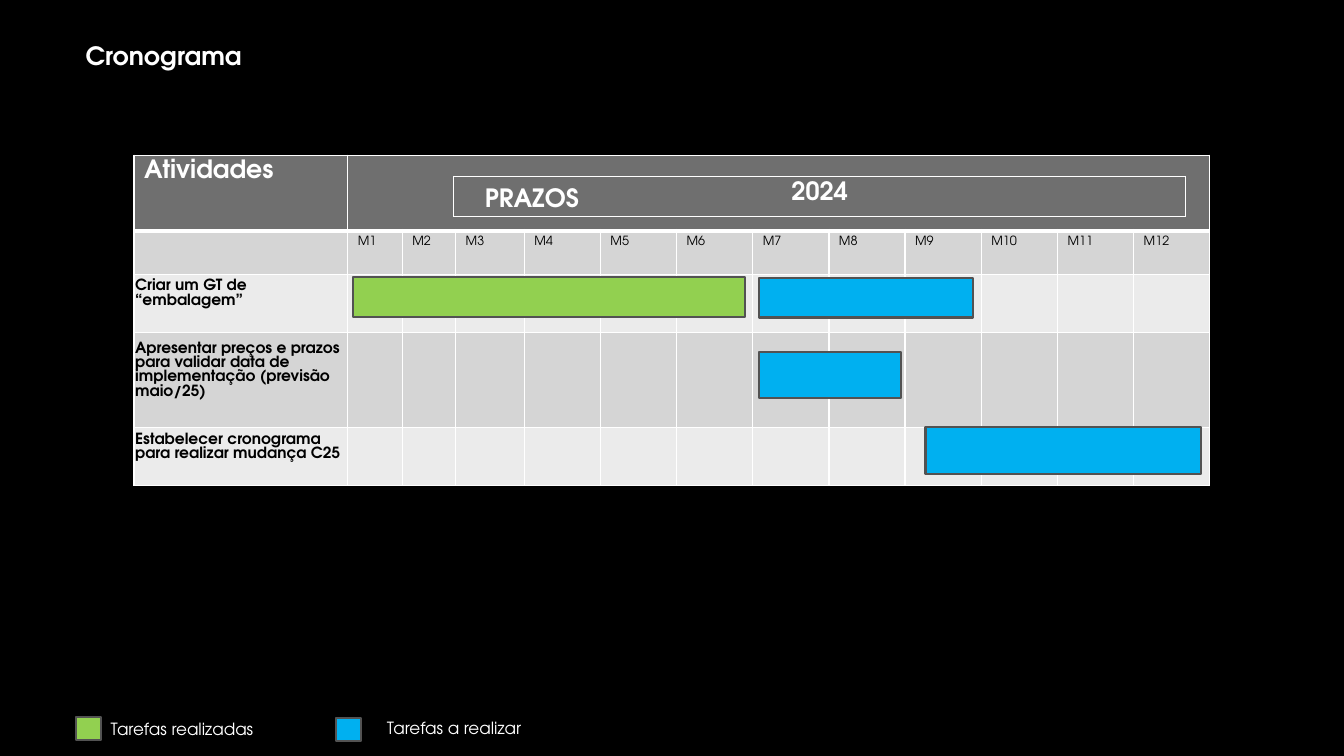
from lxml import etree
from pptx import Presentation
from pptx.dml.color import RGBColor
from pptx.enum.shapes import MSO_SHAPE as Preset
from pptx.enum.text import MSO_ANCHOR as Anchor, PP_ALIGN as Align
from pptx.oxml.ns import qn
from pptx.util import Inches, Pt

FONT = "TeX Gyre Adventor"
WHITE, BLACK = "FFFFFF", "000000"
HEADER, DARK_ROW, LIGHT_ROW = "6F6F6F", "D5D5D5", "EBEBEB"
DONE, PLANNED, OUTLINE = "92D050", "00B0F0", "525252"

SCHEDULE_WIDTH = 10.67
FIRST_WIDTHS = [2.12, 0.54, 0.53, 0.68]
EQUAL_MONTHS = 9
EQUAL_WIDTH = (SCHEDULE_WIDTH - sum(FIRST_WIDTHS)) / EQUAL_MONTHS
COLUMN_WIDTHS = FIRST_WIDTHS + [EQUAL_WIDTH] * EQUAL_MONTHS
ROW_HEIGHTS = [0.75, 0.43, 0.56, 0.92, 0.57]
ACTIVITIES = [
    "Criar um GT de “embalagem”",
    "Apresentar preços e prazos para validar data de implementação (previsão maio/25)",
    "Estabelecer cronograma para realizar mudança C25",
]
BARS = [
    (3.5, 2.75, 3.89, 0.4, DONE),
    (7.53, 2.76, 2.12, 0.39, PLANNED),
    (7.53, 3.49, 1.41, 0.46, PLANNED),
    (9.18, 4.24, 2.73, 0.46, PLANNED),
]
LEGEND = [
    (0.75, 7.11, 1.0, 7.08, DONE, "Tarefas realizadas"),
    (3.33, 7.12, 3.74, 7.07, PLANNED, "Tarefas a realizar"),
]


def color(value):
    return RGBColor.from_string(value)


def write(text_frame, text, size, text_color, bold=False):
    paragraph = text_frame.paragraphs[0]
    run = paragraph.add_run()
    run.text = text
    run.font.name = FONT
    run.font.size = Pt(size)
    run.font.bold = bold
    run.font.color.rgb = color(text_color)
    return paragraph


def add_label(slide, left, top, width, height, text, size, bold=False):
    box = slide.shapes.add_textbox(
        Inches(left), Inches(top), Inches(width), Inches(height))
    box.text_frame.word_wrap = True
    write(box.text_frame, text, size, WHITE, bold)


def add_block(slide, left, top, width, height, fill):
    block = slide.shapes.add_shape(
        Preset.RECTANGLE, Inches(left), Inches(top), Inches(width), Inches(height))
    block.shadow.inherit = False
    block.fill.solid()
    block.fill.fore_color.rgb = color(fill)
    block.line.color.rgb = color(OUTLINE)
    block.line.width = Pt(1.5)


def add_grid(slide, left, top, widths, heights):
    frame = slide.shapes.add_table(
        len(heights), len(widths), Inches(left), Inches(top),
        Inches(sum(widths)), Inches(sum(heights)))
    table = frame.table
    for column, width in zip(table.columns, widths):
        column.width = Inches(width)
    for row, height in zip(table.rows, heights):
        row.height = Inches(height)
    return table


def style_cell(cell, fill=None, top=1, bottom=1):
    """Draw white borders, then fill the cell or leave it clear."""
    properties = cell._tc.get_or_add_tcPr()
    for side, width in (("L", 1), ("R", 1), ("T", top), ("B", bottom)):
        line = etree.SubElement(properties, qn(f"a:ln{side}"), w=str(Pt(width)))
        solid = etree.SubElement(line, qn("a:solidFill"))
        etree.SubElement(solid, qn("a:srgbClr"), val=WHITE)
    if fill:
        cell.fill.solid()
        cell.fill.fore_color.rgb = color(fill)
    else:
        cell.fill.background()


def add_schedule(slide):
    table = add_grid(slide, 1.33, 1.54, COLUMN_WIDTHS, ROW_HEIGHTS)
    row_fills = [HEADER, DARK_ROW, LIGHT_ROW, DARK_ROW, LIGHT_ROW]
    for row_index, fill in enumerate(row_fills):
        for column_index in range(len(COLUMN_WIDTHS)):
            style_cell(table.cell(row_index, column_index), fill,
                       top=3 if row_index == 1 else 1,
                       bottom=3 if row_index == 0 else 1)
    table.cell(0, 1).merge(table.cell(0, len(COLUMN_WIDTHS) - 1))
    write(table.cell(0, 0).text_frame, "Atividades", 18, WHITE, bold=True)
    for month in range(1, len(COLUMN_WIDTHS)):
        write(table.cell(1, month).text_frame, f"M{month}", 9, BLACK)
    for row_index, activity in enumerate(ACTIVITIES, start=2):
        cell = table.cell(row_index, 0)
        cell.vertical_anchor = Anchor.MIDDLE
        cell.margin_left = cell.margin_right = cell.margin_top = Inches(0.01)
        cell.margin_bottom = Inches(0.2)
        write(cell.text_frame, activity, 11, BLACK, bold=True)


def add_year(slide):
    cell = add_grid(slide, 4.5, 1.75, [7.26], [0.4]).cell(0, 0)
    style_cell(cell)
    paragraph = write(cell.text_frame, "2024", 18, WHITE, bold=True)
    paragraph.alignment = Align.CENTER


def main():
    presentation = Presentation()
    presentation.slide_width = Inches(13.33)
    presentation.slide_height = Inches(7.5)
    slide = presentation.slides.add_slide(presentation.slide_layouts[6])
    slide.background.fill.solid()
    slide.background.fill.fore_color.rgb = color(BLACK)

    add_label(slide, 0.75, 0.35, 9.17, 0.4, "Cronograma", 18, bold=True)
    add_schedule(slide)
    add_label(slide, 4.71, 1.76, 2.81, 0.4, "PRAZOS", 18, bold=True)
    add_year(slide)
    for bar in BARS:
        add_block(slide, *bar)
    for key_left, key_top, text_left, text_top, fill, text in LEGEND:
        add_block(slide, key_left, key_top, 0.25, 0.23, fill)
        add_label(slide, text_left, text_top, 2.17, 0.3, text, 12)
    presentation.save("out.pptx")


if __name__ == "__main__":
    main()
